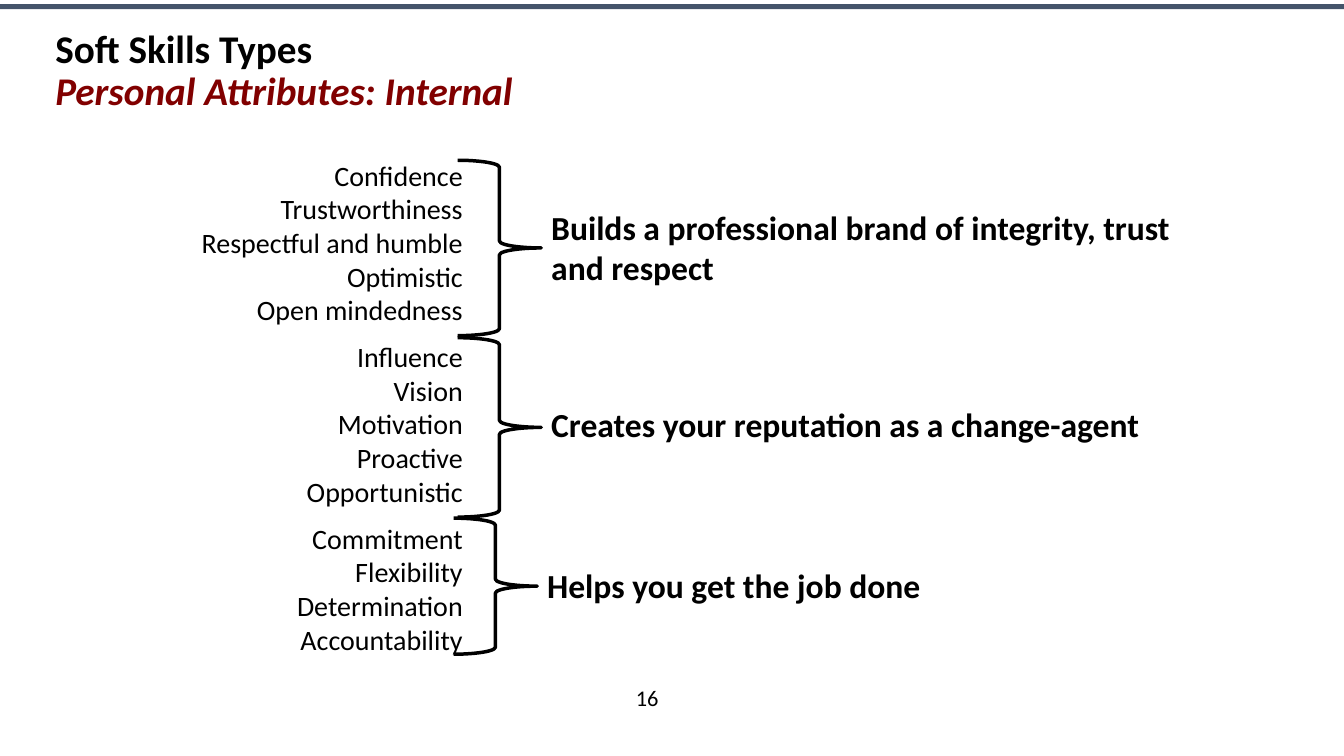
from dataclasses import dataclass

from pptx import Presentation
from pptx.dml.color import RGBColor
from pptx.enum.shapes import MSO_SHAPE
from pptx.enum.text import MSO_ANCHOR, PP_ALIGN
from pptx.slide import Slide
from pptx.text.text import TextFrame, _Paragraph
from pptx.util import Pt

COLOURS = {"rule": "44546A", "ink": "000000", "accent": "810000"}
FONT = "Calibri"
BRACE_WIDTH = 59.76
LABEL_WIDTH = 465.12
GROUP_GAP = 9.6


@dataclass(frozen=True)
class SkillGroup:
    skills: tuple[str, ...]
    benefit: str
    brace_left: float
    brace_top: float
    brace_height: float
    benefit_top: float
    benefit_height: float


GROUPS = (
    SkillGroup(
        ("Confidence", "Trustworthiness", "Respectful and humble", "Optimistic", "Open mindedness"),
        "Builds a professional brand of integrity, trust and respect",
        326.88, 114.48, 125.28, 144, 65.52,
    ),
    SkillGroup(
        ("Influence", "Vision", "Motivation", "Proactive", "Opportunistic"),
        "Creates your reputation as a change-agent",
        326.88, 241.2, 128.16, 285.12, 36,
    ),
    SkillGroup(
        ("Commitment", "Flexibility", "Determination", "Accountability"),
        "Helps you get the job done",
        324, 370.08, 97.2, 400.32, 36,
    ),
)


def add_frame(slide: Slide, left: float, top: float, width: float, height: float) -> TextFrame:
    frame = slide.shapes.add_textbox(Pt(left), Pt(top), Pt(width), Pt(height)).text_frame
    frame.word_wrap = True
    return frame


def add_text(paragraph: _Paragraph, text: str, size: float, bold: bool = False,
             italic: bool = False, colour: str = "ink") -> None:
    run = paragraph.add_run()
    run.text = text
    run.font.name = FONT
    run.font.size = Pt(size)
    run.font.bold = bold
    run.font.italic = italic
    run.font.color.rgb = RGBColor.from_string(COLOURS[colour])


def add_top_rule(slide: Slide) -> None:
    rule = slide.shapes.add_shape(MSO_SHAPE.RECTANGLE, Pt(0), Pt(2.88), Pt(960), Pt(3.6))
    rule.shadow.inherit = False
    rule.fill.solid()
    rule.fill.fore_color.rgb = RGBColor.from_string(COLOURS["rule"])
    rule.line.fill.background()


def add_page_number(slide: Slide) -> None:
    frame = add_frame(slide, 435.6, 483.84, 53.28, 28.8)
    frame.vertical_anchor = MSO_ANCHOR.MIDDLE
    number = frame.paragraphs[0]
    number.alignment = PP_ALIGN.CENTER
    add_text(number, "16", 16)


def add_heading(slide: Slide) -> None:
    heading = add_frame(slide, 32.4, 17.28, 860.4, 67.68).paragraphs[0]
    heading.line_spacing = 0.9
    add_text(heading, "Soft Skills Types", 28, bold=True)
    heading.add_line_break()
    add_text(heading, "Personal Attributes: Internal", 28, bold=True, italic=True, colour="accent")


def add_skills(slide: Slide, groups: tuple[SkillGroup, ...]) -> None:
    frame = add_frame(slide, 128.16, 109.44, 209.52, 352.8)
    for group_index, group in enumerate(groups):
        for skill_index, skill in enumerate(group.skills):
            is_first = group_index == skill_index == 0
            entry = frame.paragraphs[0] if is_first else frame.add_paragraph()
            entry.alignment = PP_ALIGN.RIGHT
            entry.line_spacing = Pt(24)
            entry.space_before = Pt(GROUP_GAP if group_index and not skill_index else 0)
            add_text(entry, skill, 20)


def add_benefit(slide: Slide, group: SkillGroup) -> None:
    brace = slide.shapes.add_shape(
        MSO_SHAPE.RIGHT_BRACE, Pt(group.brace_left), Pt(group.brace_top),
        Pt(BRACE_WIDTH), Pt(group.brace_height),
    )
    brace.shadow.inherit = False
    brace.fill.background()
    brace.line.color.rgb = RGBColor.from_string(COLOURS["ink"])
    brace.line.width = Pt(2.5)
    frame = add_frame(slide, group.brace_left + BRACE_WIDTH, group.benefit_top,
                      LABEL_WIDTH, group.benefit_height)
    add_text(frame.paragraphs[0], group.benefit, 24, bold=True)


def main() -> None:
    deck = Presentation()
    deck.slide_width, deck.slide_height = Pt(960), Pt(540)
    slide = deck.slides.add_slide(deck.slide_layouts[6])
    add_top_rule(slide)
    add_page_number(slide)
    add_heading(slide)
    add_skills(slide, GROUPS)
    for group in GROUPS:
        add_benefit(slide, group)
    deck.save("out.pptx")


if __name__ == "__main__":
    main()
